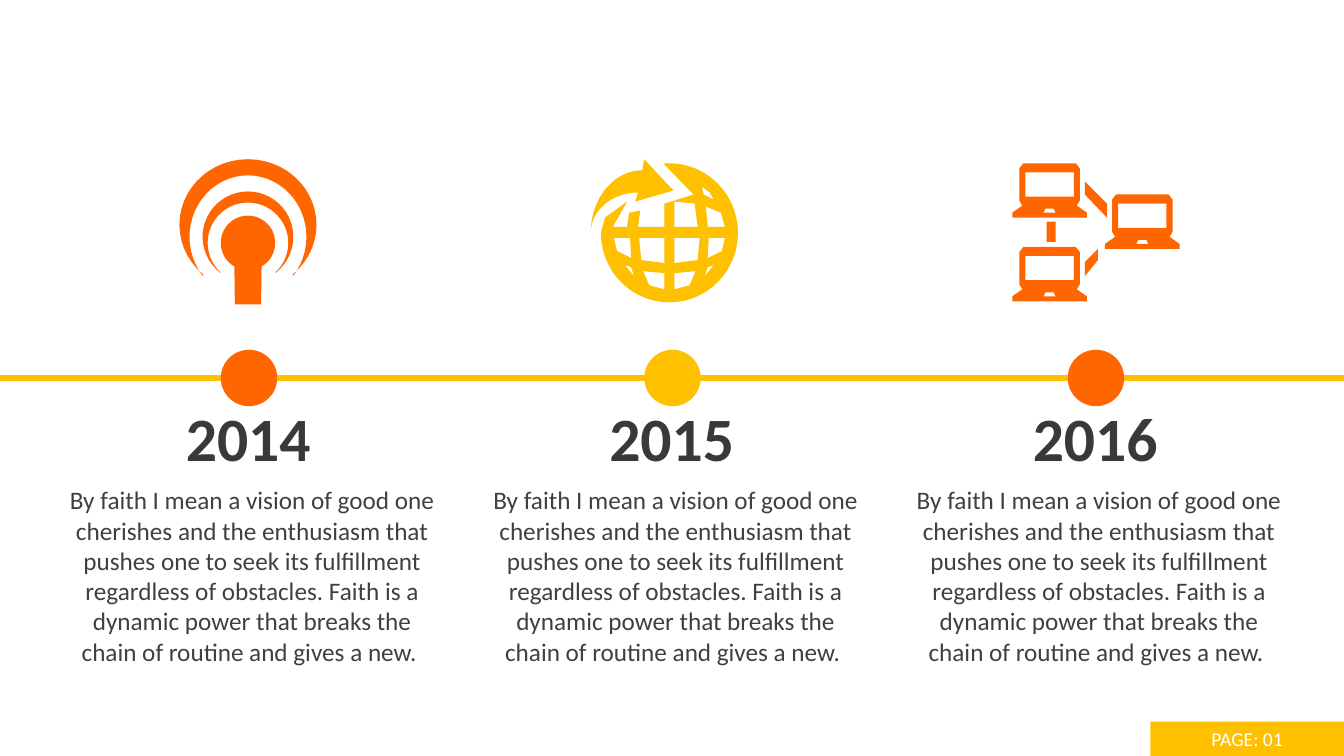
"""Build a three-stage timeline slide with drawn icons."""
from dataclasses import dataclass
from math import cos, radians, sin

from lxml import etree
from pptx import Presentation
from pptx import util as u
from pptx.dml.color import RGBColor
from pptx.enum import shapes, text
from pptx.oxml.ns import qn

Path = list[tuple[float, float]]


@dataclass(frozen=True)
class Theme:
    """Colours, font and type sizes."""
    orange: str = "FF6600"
    gold: str = "FFC000"
    dark: str = "3B3838"
    grey: str = "404040"
    white: str = "FFFFFF"
    font: str = "Calibri"
    head: int = 44
    body: int = 18
    small: int = 14


@dataclass(frozen=True)
class Stage:
    """One stop on the timeline with the outlines of its icon."""
    year: str
    hue: str
    icon: list[Path]


THEME = Theme()
FIRST, PITCH, AXIS, DOT = 2.47, 4.2, 3.75, 0.56
BODY = ("By faith I mean a vision of good one cherishes and the enthusiasm that pushes one "
        "to seek its fulfillment regardless of obstacles. Faith is a dynamic power that "
        "breaks the chain of routine and gives a new. ")


def arc(x: float, y: float, wide: float, high: float, start: int, end: int) -> Path:
    """Return points along an ellipse, with angles in degrees clockwise from the right."""
    count = 40
    turns = [radians(start + (end - start) * i / count) for i in range(count + 1)]
    return [(x + wide * cos(t), y + high * sin(t)) for t in turns]


def shift(path: Path, left: float, top: float) -> Path:
    """Move a path by the given offset."""
    return [(x + left, y + top) for x, y in path]


def flip(path: Path) -> Path:
    """Reflect a path about x = 0."""
    return [(-x, y) for x, y in path]


def whole(half: Path) -> Path:
    """Join a right half to its reflection."""
    return half + flip(half)[::-1]


def mast() -> list[Path]:
    """Return two crescents round a keyhole."""
    x = 2.46
    return [
        arc(x, 2.23, 0.68, 0.65, 131, 409) + arc(x, 2.35, 0.58, 0.61, 400, 140),
        arc(x, 2.35, 0.45, 0.45, 127, 413) + arc(x, 2.41, 0.4, 0.4, 408, 132),
        arc(x, 2.41, 0.27, 0.27, 120, 420) + [(x + 0.13, 3.02), (x - 0.13, 3.02)],
    ]


def globe() -> list[Path]:
    """Return a gridded globe with an arrow sweeping over it."""
    x, y = 6.64, 2.31
    north, south = 2.25, 2.36
    disc = arc(x, y, 0.68, 0.69, 265, 540) + [
        (6, 2.16), (6.22, 2), (6.08, north), (6.22, north), (6.24, 2.11), (6.35, 2.09),
        (6.33, north), (6.59, north), (6.59, 2.02), (6.88, 1.93)]
    arrow = ([(6.68, 1.89), (6.39, 1.58)] + arc(6.37, y, 0.51, 0.62, 270, 180)
             + arc(6.33, y, 0.47, 0.4, 180, 270) + [(6.3, 2)])
    lower = [
        [(0.05, south), (0.3, south), (0.28, 2.58), (0.05, 2.61)],
        [(0.05, 2.71), (0.26, 2.69), (0.2, 2.83), (0.05, 2.87)],
        [(0.39, south), (0.55, south), (0.52, 2.49), (0.38, 2.56)],
        [(0.38, 2.65), (0.44, 2.63), (0.35, 2.74)],
    ]
    upper = [
        [(0.05, 2), (0.25, 2.02), (0.28, north), (0.05, north)],
        [(0.36, 2.05), (0.51, 2.11), (0.55, north), (0.38, north)],
        [(0.32, 1.85), (0.4, 1.91), (0.44, 1.98), (0.34, 1.93)],
    ]
    holes = upper + lower + [flip(cell) for cell in lower]
    return [disc, arrow] + [shift(cell, x, 0) for cell in holes]


def net() -> list[Path]:
    """Return three laptops joined by bars."""
    laptop = [
        whole([(0.26, 0), (0.3, 0.05), (0.3, 0.37), (0.27, 0.42), (0.37, 0.49), (0.37, 0.54)]),
        whole([(0.04, 0.45), (0.06, 0.49)]),
        whole([(0.24, 0.09), (0.24, 0.33)]),
    ]
    bars = [
        [(10.76, 1.8), (10.76, 1.93), (10.98, 2.16), (10.98, 2.02)],
        [(10.89, 2.47), (10.76, 2.6), (10.76, 2.74), (10.89, 2.58)],
        [(10.38, 2.2), (10.47, 2.2), (10.47, 2.4), (10.38, 2.4)],
    ]
    spots = (10.41, 1.62), (11.33, 1.93), (10.41, 2.45)
    return bars + [shift(path, *spot) for spot in spots for path in laptop]


STAGES = [Stage("2014", THEME.orange, mast()),
          Stage("2015", THEME.gold, globe()),
          Stage("2016", THEME.orange, net())]


def paint(shape, hue: str) -> None:
    """Give a shape a flat fill with no line or shadow."""
    shape.fill.solid()
    shape.fill.fore_color.rgb = RGBColor.from_string(hue)
    shape.line.fill.background()
    shape.shadow.inherit = False


def block(slide, kind, left: float, top: float, wide: float, high: float, hue: str):
    """Add a flat preset shape."""
    shape = slide.shapes.add_shape(kind, *map(u.Inches, (left, top, wide, high)))
    paint(shape, hue)
    return shape


def draw(slide, icon: list[Path], hue: str) -> None:
    """Draw an icon as one freeform."""
    pen = None
    for path in icon:
        start, *rest = [(u.Inches(x), u.Inches(y)) for x, y in path]
        if pen is None:
            pen = slide.shapes.build_freeform(*start)
        else:
            pen.move_to(*start)
        pen.add_line_segments(rest)
    paint(pen.convert_to_shape(), hue)


def write(frame, words: str, size: int, hue: str, bold: bool = False, mid: bool = True) -> None:
    """Put one run of text into a frame."""
    para = frame.paragraphs[0]
    para.alignment = text.PP_ALIGN.CENTER if mid else text.PP_ALIGN.LEFT
    run = para.add_run()
    run.text = words
    run.font.name, run.font.size, run.font.bold = THEME.font, u.Pt(size), bold
    run.font.color.rgb = RGBColor.from_string(hue)


def label(slide, mid: float, top: float, wide: float, high: float, wrap: bool):
    """Add a text box centred on mid and return its frame."""
    box = slide.shapes.add_textbox(*map(u.Inches, (mid - wide / 2, top, wide, high)))
    box.text_frame.word_wrap = wrap
    box.text_frame.auto_size = text.MSO_AUTO_SIZE.SHAPE_TO_FIT_TEXT
    return box.text_frame


def main() -> None:
    """Build and save the slide."""
    deck = Presentation()
    deck.slide_width, deck.slide_height = u.Inches(13.33), u.Inches(7.5)
    slide = deck.slides.add_slide(deck.slide_layouts[6])
    line = slide.shapes.add_connector(
        shapes.MSO_CONNECTOR.STRAIGHT, *map(u.Inches, (-0.19, AXIS, 13.54, AXIS)))
    line.line.color.rgb = RGBColor.from_string(THEME.gold)
    line.line.width = u.Pt(4.5)
    etree.SubElement(line.element.spPr, qn("a:effectLst"))
    for i, stage in enumerate(STAGES):
        mid = FIRST + i * PITCH
        block(slide, shapes.MSO_SHAPE.OVAL, mid - DOT / 2, AXIS - DOT / 2, DOT, DOT, stage.hue)
        draw(slide, stage.icon, stage.hue)
        write(label(slide, mid, 3.92, 1.45, 0.84, False), stage.year,
              THEME.head, THEME.dark, bold=True, mid=False)
        write(label(slide, mid + 0.03, 4.76, 3.86, 1.92, True), BODY, THEME.body, THEME.grey)
    page = block(slide, shapes.MSO_SHAPE.RECTANGLE, 11.41, 7.16, 1.92, 0.34, THEME.gold)
    page.text_frame.vertical_anchor = text.MSO_ANCHOR.MIDDLE
    write(page.text_frame, "PAGE: 01", THEME.small, THEME.white)
    deck.save("out.pptx")


if __name__ == "__main__":
    main()
